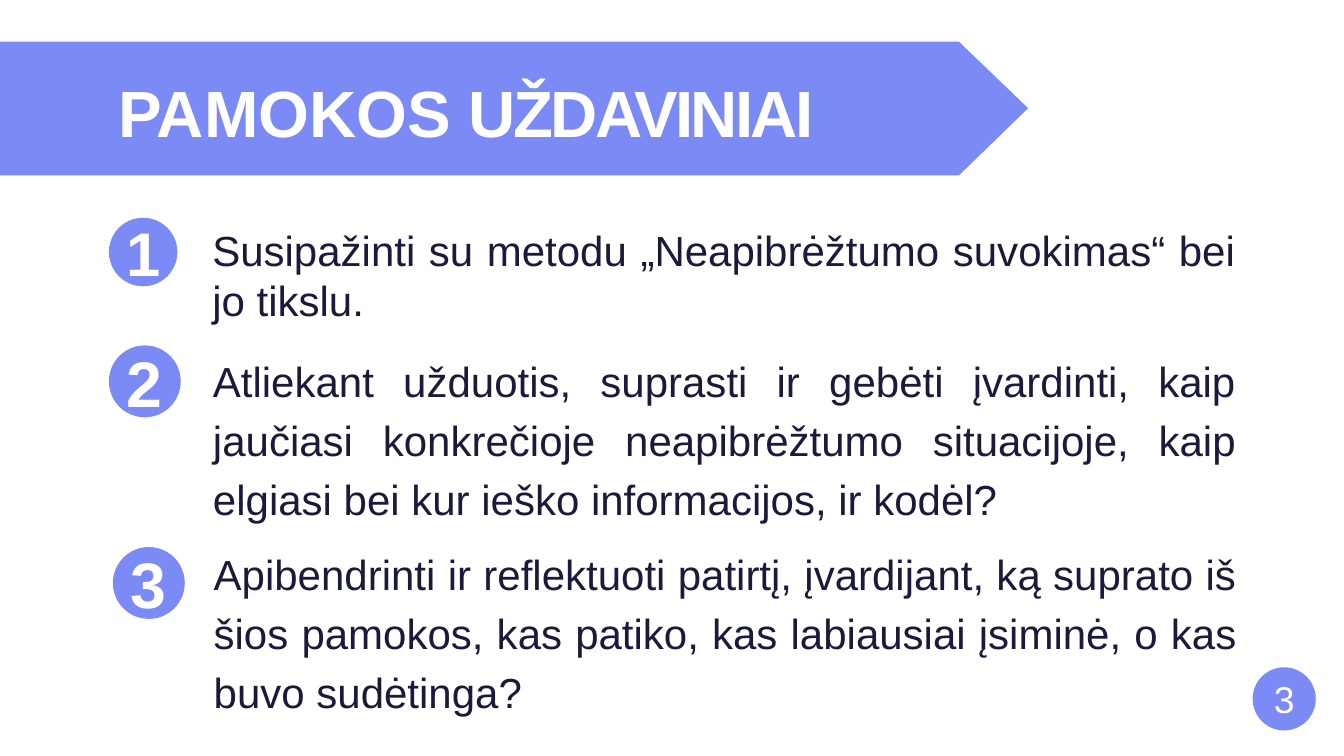
from pptx import Presentation
from pptx.dml.color import RGBColor
from pptx.enum.shapes import MSO_SHAPE
from pptx.enum.text import MSO_ANCHOR, PP_ALIGN
from pptx.util import Inches, Pt

PERIWINKLE = RGBColor(0x7B, 0x8A, 0xF5)
NAVY = RGBColor(0x1A, 0x1A, 0x3A)
WHITE = RGBColor(0xFF, 0xFF, 0xFF)
FONT = "Arial"

OBJECTIVES = [
    ("1", 66, (1.62, 3.24, 1.02), (3.15, 3.33, 1.53), 1.0,
     "Susipažinti su metodu „Neapibrėžtumo suvokimas“ bei jo tikslu."),
    ("2", 69, (1.62, 5.14, 1.07), (3.16, 5.15, 2.59), 1.17,
     "Atliekant užduotis, suprasti ir gebėti įvardinti, kaip jaučiasi "
     "konkrečioje neapibrėžtumo situacijoje, kaip elgiasi bei kur ieško "
     "informacijos, ir kodėl?"),
    ("3", 69, (1.68, 8.14, 1.07), (3.17, 8.03, 2.59), 1.17,
     "Apibendrinti ir reflektuoti patirtį, įvardijant, ką suprato iš šios "
     "pamokos, kas patiko, kas labiausiai įsiminė, o kas buvo sudėtinga?"),
]


def style_paragraph(paragraph, size, color, bold=False):
    paragraph.font.name = FONT
    paragraph.font.size = Pt(size)
    paragraph.font.bold = bold
    paragraph.font.color.rgb = color


def clear_margins(text_frame):
    text_frame.margin_left = text_frame.margin_right = 0
    text_frame.margin_top = text_frame.margin_bottom = 0


def paint(shape):
    shape.shadow.inherit = False
    shape.fill.solid()
    shape.fill.fore_color.rgb = PERIWINKLE
    shape.line.fill.background()


def add_banner(slide):
    points = [(14.27, 0.62), (15.3, 1.61), (14.27, 2.61), (0, 2.61)]
    builder = slide.shapes.build_freeform(0, Inches(0.62), scale=1.0)
    builder.add_line_segments([(Inches(x), Inches(y)) for x, y in points])
    paint(builder.convert_to_shape())


def add_text_box(slide, left, top, width, height):
    text_box = slide.shapes.add_textbox(
        Inches(left), Inches(top), Inches(width), Inches(height))
    text_frame = text_box.text_frame
    text_frame.word_wrap = True
    clear_margins(text_frame)
    text_frame.margin_left = text_frame.margin_top = Inches(0.01)
    return text_frame.paragraphs[0]


def add_title(slide):
    paragraph = add_text_box(slide, 1.75, 1.06, 11.25, 1.19)
    paragraph.add_run().text = "PAMOKOS "
    tight_run = paragraph.add_run()
    tight_run.text = "UŽDAVINIAI"
    tight_run._r.get_or_add_rPr().set("spc", "-290")
    style_paragraph(paragraph, 70, WHITE, bold=True)


def add_badge(slide, number, size, left, top, diameter, bold=True):
    badge = slide.shapes.add_shape(
        MSO_SHAPE.OVAL, Inches(left), Inches(top),
        Inches(diameter), Inches(diameter))
    paint(badge)
    text_frame = badge.text_frame
    text_frame.word_wrap = False
    text_frame.vertical_anchor = MSO_ANCHOR.MIDDLE
    clear_margins(text_frame)
    paragraph = text_frame.paragraphs[0]
    paragraph.text = number
    paragraph.alignment = PP_ALIGN.CENTER
    style_paragraph(paragraph, size, WHITE, bold)


def add_objective(slide, left, top, height, line_spacing, text):
    paragraph = add_text_box(slide, left, top, 15.23, height)
    paragraph.text = text
    paragraph.alignment = PP_ALIGN.JUSTIFY
    paragraph.line_spacing = line_spacing
    style_paragraph(paragraph, 45, NAVY)


def main():
    presentation = Presentation()
    presentation.slide_width = Inches(20)
    presentation.slide_height = Inches(11.25)
    slide = presentation.slides.add_slide(presentation.slide_layouts[6])

    add_banner(slide)
    add_title(slide)
    for number, size, badge_place, text_place, line_spacing, text in OBJECTIVES:
        add_badge(slide, number, size, *badge_place)
        add_objective(slide, *text_place, line_spacing, text)
    add_badge(slide, "3", 40, 18.64, 9.93, 0.94, bold=False)

    presentation.save("out.pptx")


if __name__ == "__main__":
    main()
